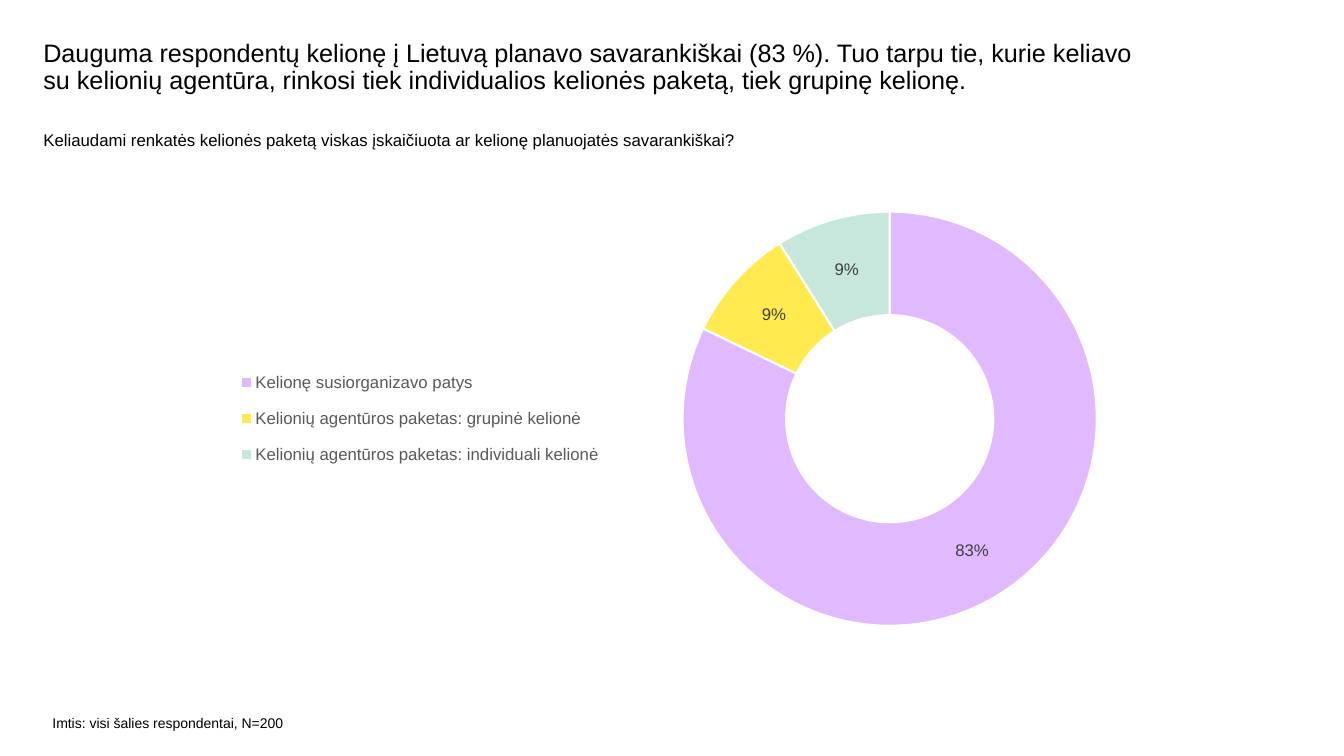
import pptx
import pptx.chart.data
import pptx.dml.color
import pptx.enum.chart
import pptx.util
from pptx.util import Inches
import lxml.etree

FONT = "Arial"


def style_font(font, size, color):
    font.name = FONT
    font.size = pptx.util.Pt(size)
    font.color.rgb = pptx.dml.color.RGBColor.from_string(color)


def place(element, **fractions):
    """Give a chart part a manual layout, in fractions of the chart area."""
    ns = "http://schemas.openxmlformats.org/drawingml/2006/chart"
    for old in element.findall(f"{{{ns}}}layout"):
        element.remove(old)
    layout = lxml.etree.Element(f"{{{ns}}}layout")
    manual = lxml.etree.SubElement(layout, f"{{{ns}}}manualLayout")
    for tag, value in fractions.items():
        lxml.etree.SubElement(manual, f"{{{ns}}}{tag}").set("val", str(value))
    position = element.find(f"{{{ns}}}legendPos")
    element.insert(0 if position is None else 1, layout)


presentation = pptx.Presentation()
presentation.slide_width = Inches(13.33)
presentation.slide_height = Inches(7.5)
slide = presentation.slides.add_slide(presentation.slide_layouts[6])

# Headline, survey question and sample note
texts = [
    ("Dauguma respondentų kelionę į Lietuvą planavo savarankiškai (83 %). "
     "Tuo tarpu tie, kurie keliavo su kelionių agentūra, rinkosi tiek "
     "individualios kelionės paketą, tiek grupinę kelionę.",
     (0.43, 0.4, 10.84, 0.6), 18, 0.9),
    ("Keliaudami renkatės kelionės paketą viskas įskaičiuota ar kelionę "
     "planuojatės savarankiškai?",
     (0.43, 1.29, 11.89, 0.61), 12, 1.0),
    ("Imtis: visi šalies respondentai, N=200", (0.52, 7.09, 2.53, 0.24), 10, 1.0),
]
for text, box, size, line_spacing in texts:
    frame = slide.shapes.add_textbox(*map(Inches, box)).text_frame
    frame.word_wrap = True
    frame.margin_left = frame.margin_right = frame.margin_top = frame.margin_bottom = 0
    paragraph = frame.paragraphs[0]
    paragraph.text = text
    paragraph.line_spacing = line_spacing
    style_font(paragraph.font, size, "000000")

# Doughnut of how the trip was arranged
answers = [
    ("Kelionę susiorganizavo patys", 0.83, "E1B9FF"),
    ("Kelionių agentūros paketas: grupinė kelionė", 0.09, "FFEB50"),
    ("Kelionių agentūros paketas: individuali kelionė", 0.09, "C7E6DC"),
]
shares = pptx.chart.data.CategoryChartData(number_format="0%")
shares.categories = [answer for answer, share, color in answers]
shares.add_series("Series 1", [share for answer, share, color in answers])
chart = slide.shapes.add_chart(
    pptx.enum.chart.XL_CHART_TYPE.DOUGHNUT,
    Inches(1.84), Inches(2.05), Inches(9.13), Inches(4.34), shares).chart
style_font(chart.font, 10, "000000")
chart.has_title = False

doughnut = chart.plots[0]
doughnut.vary_by_categories = True
for index, (answer, share, color) in enumerate(answers):
    slice_format = doughnut.series[0].points[index].format
    slice_format.fill.solid()
    slice_format.fill.fore_color.rgb = pptx.dml.color.RGBColor.from_string(color)
    slice_format.line.color.rgb = pptx.dml.color.RGBColor.from_string("FFFFFF")
    slice_format.line.width = pptx.util.Pt(1.5)

doughnut.has_data_labels = True
labels = doughnut.data_labels
labels.show_value = True
labels.show_percentage = False
labels.number_format = "0%"
labels.number_format_is_linked = False
style_font(labels.font, 12, "404040")

chart.has_legend = True
legend = chart.legend
legend.position = pptx.enum.chart.XL_LEGEND_POSITION.BOTTOM
legend.include_in_layout = False
style_font(legend.font, 12, "595959")

chart_parts = chart.element.chart
place(chart_parts.plotArea, layoutTarget="inner", xMode="edge", yMode="edge",
      x=0.54, y=0, w=0.45, h=0.97)
place(chart_parts.legend, xMode="edge", yMode="edge", x=0.05, y=0.34, w=0.41, h=0.29)

presentation.save("out.pptx")
